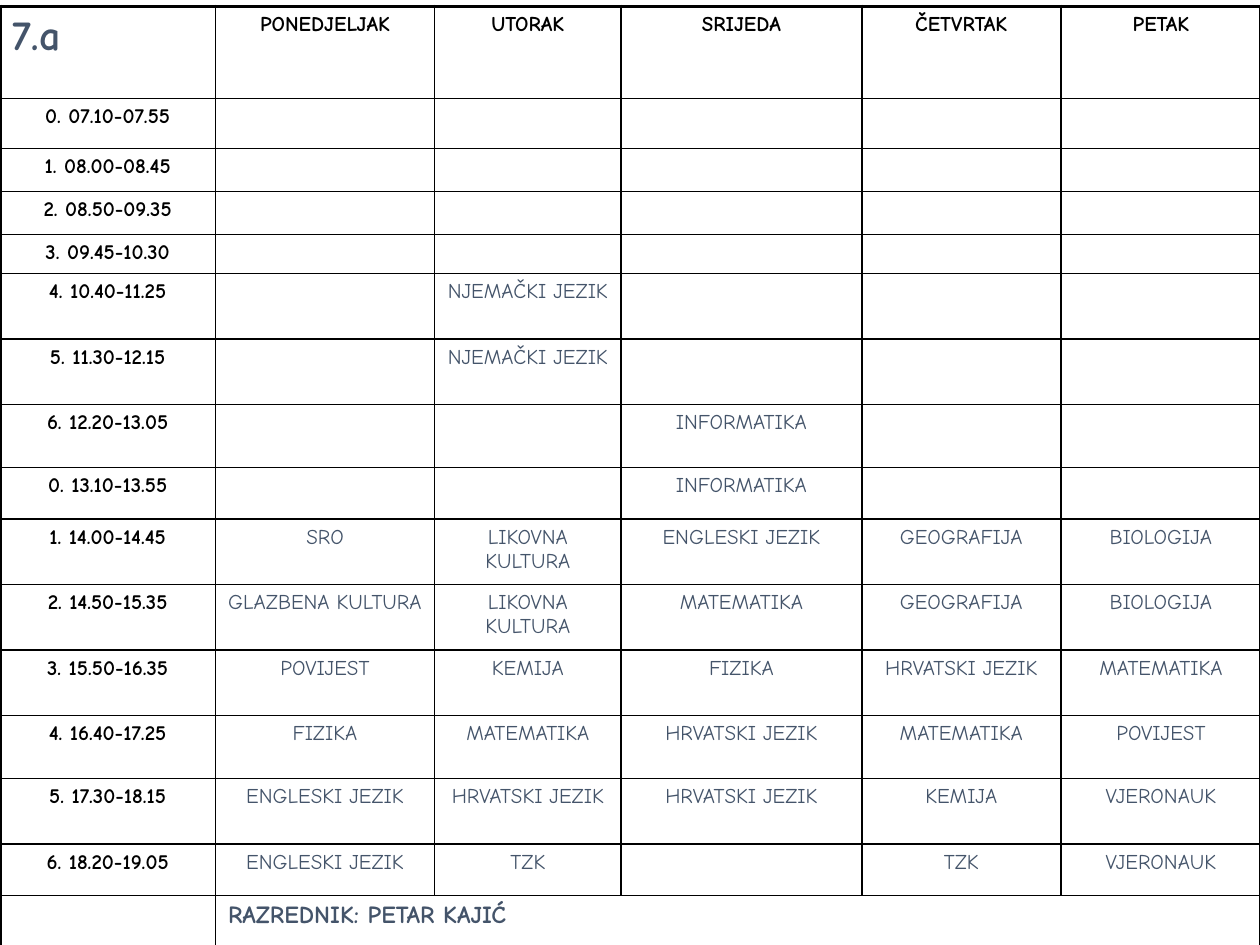
from lxml.etree import SubElement as Sub
from pptx import Presentation
from pptx.dml.color import RGBColor as Rgb
from pptx.enum.text import PP_ALIGN as Align
from pptx.oxml.ns import qn
from pptx.util import Inches, Pt

INK = {"text": "000000", "class": "44546A", "line": "000000"}
THIN, THICK = 1, 2.25
COLS = [1.71, 1.74, 1.48, 1.91, 1.58, 1.59]
ROWS = [0.73, 0.4, 0.34, 0.34, 0.31, 0.52, 0.52, 0.5,
        0.41, 0.52, 0.52, 0.52, 0.5, 0.52, 0.41, 0.41]
DAYS = ["PONEDJELJAK", "UTORAK", "SRIJEDA", "ČETVRTAK", "PETAK"]
PLAN = [
    ("0. 07.10-07.55", {}),
    ("1. 08.00-08.45", {}),
    ("2. 08.50-09.35", {}),
    ("3. 09.45-10.30", {}),
    ("4. 10.40-11.25", {2: "NJEMAČKI JEZIK"}),
    ("5. 11.30-12.15", {2: "NJEMAČKI JEZIK"}),
    ("6. 12.20-13.05", {3: "INFORMATIKA"}),
    ("0. 13.10-13.55", {3: "INFORMATIKA"}),
    ("1. 14.00-14.45", {1: "SRO", 2: "LIKOVNA KULTURA", 3: "ENGLESKI JEZIK",
                        4: "GEOGRAFIJA", 5: "BIOLOGIJA"}),
    ("2. 14.50-15.35", {1: "GLAZBENA KULTURA", 2: "LIKOVNA KULTURA",
                        3: "MATEMATIKA", 4: "GEOGRAFIJA", 5: "BIOLOGIJA"}),
    ("3. 15.50-16.35", {1: "POVIJEST", 2: "KEMIJA", 3: "FIZIKA",
                        4: "HRVATSKI JEZIK", 5: "MATEMATIKA"}),
    ("4. 16.40-17.25", {1: "FIZIKA", 2: "MATEMATIKA", 3: "HRVATSKI JEZIK",
                        4: "MATEMATIKA", 5: "POVIJEST"}),
    ("5. 17.30-18.15", {1: "ENGLESKI JEZIK", 2: "HRVATSKI JEZIK",
                        3: "HRVATSKI JEZIK", 4: "KEMIJA", 5: "VJERONAUK"}),
    ("6. 18.20-19.05", {1: "ENGLESKI JEZIK", 2: "TZK", 4: "TZK",
                        5: "VJERONAUK"}),
]


class Deck:
    """Holds the style and the current slide, and draws the timetable."""

    def __init__(self, wide, high, face):
        self.deck = Presentation()
        self.deck.slide_width, self.deck.slide_height = Inches(wide), Inches(high)
        self.face = face
        self.slide = self.deck.slides.add_slide(self.deck.slide_layouts[6])

    def table(self, left, top, cols, rows):
        wide, high = self.deck.slide_width, self.deck.slide_height
        frame = self.slide.shapes.add_table(
            len(rows), len(cols), int(left * wide), int(top * high),
            Inches(sum(cols)), Inches(sum(rows)))
        self.grid = frame.table
        self.grid.first_row = self.grid.horz_banding = False
        for col, size in zip(self.grid.columns, cols):
            col.width = Inches(size)
        for row, size in zip(self.grid.rows, rows):
            row.height = Inches(size)

    def cell(self, row, col, text="", ink="text", bold=True, size=12,
             align=Align.CENTER, span=1):
        cell = self.grid.cell(row, col)
        end = col + span - 1
        if span > 1:
            cell.merge(self.grid.cell(row, end))
        cell.fill.background()
        self.edges(cell, row, col, end)
        para = cell.text_frame.paragraphs[0]
        para.alignment = align
        font = para.font
        font.name, font.size, font.bold = self.face, Pt(size), bold
        font.color.rgb = Rgb.from_string(INK[ink])
        if text:
            para.add_run().text = text
        else:
            Sub(para._p, qn("a:endParaRPr"), sz=str(size * 100))

    def edges(self, cell, row, col, end):
        outer = {"L": col == 0, "R": end == len(COLS) - 1,
                 "T": row == 0, "B": row == len(ROWS) - 1}
        props = cell._tc.get_or_add_tcPr()
        for spot, (side, edge) in enumerate(outer.items()):
            width = Pt(THICK if edge else THIN)
            line = Sub(props, qn(f"a:ln{side}"), w=str(width))
            fill = Sub(line, qn("a:solidFill"))
            Sub(fill, qn("a:srgbClr"), val=INK["line"])
            props.insert(spot, line)

    def save(self):
        self.deck.save("out.pptx")


def main():
    deck = Deck(10, 7.5, "Comic Neue")
    deck.table(0, 0.05 / 7.5, COLS, ROWS)
    deck.cell(0, 0, "7.a", "class", size=24, align=Align.LEFT)
    for col, day in enumerate(DAYS, 1):
        deck.cell(0, col, day)
    for row, (time, plan) in enumerate(PLAN, 1):
        deck.cell(row, 0, time)
        for col in range(1, len(COLS)):
            deck.cell(row, col, plan.get(col, ""), "class", bold=False)
    last = len(ROWS) - 1
    deck.cell(last, 0)
    deck.cell(last, 1, "RAZREDNIK: PETAR KAJIĆ", "class", size=14,
              align=Align.LEFT, span=len(DAYS))
    deck.save()


if __name__ == "__main__":
    main()
